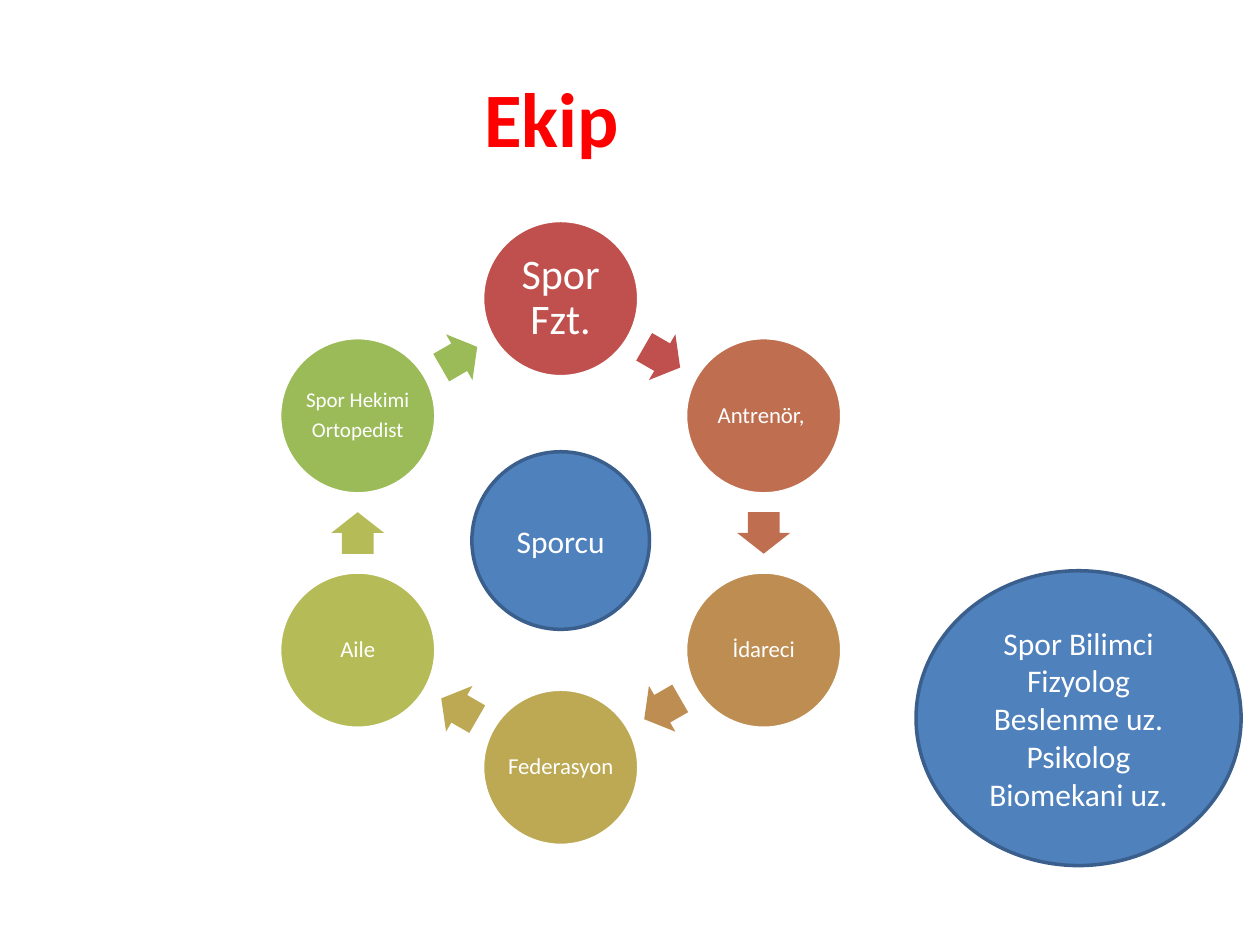
"""Builds the "Ekip" slide: a ring of team roles around the athlete."""
import math

import pptx
import pptx.dml.color
import pptx.enum.shapes
import pptx.enum.text
import pptx.util

SHAPES = pptx.enum.shapes.MSO_SHAPE
CENTER = pptx.enum.text.PP_ALIGN.CENTER
MIDDLE = pptx.enum.text.MSO_ANCHOR.MIDDLE


def color(code):
    return pptx.dml.color.RGBColor.from_string(code)


def centered(kind, x, y, width, height, fill, line=None, lines=(), size=18):
    shape = slide.shapes.add_shape(
        kind, *(round(cell * length) for length in (x - width / 2, y - height / 2, width, height)))
    shape.shadow.inherit = False
    shape.fill.solid()
    shape.fill.fore_color.rgb = color(fill)
    if line:
        shape.line.color.rgb = color(line)
        shape.line.width = pptx.util.Pt(2)
    else:
        shape.line.fill.background()
    frame = shape.text_frame
    frame.vertical_anchor = MIDDLE
    for number, text in enumerate(lines):
        paragraph = frame.add_paragraph() if number else frame.paragraphs[0]
        paragraph.text = text
        paragraph.alignment = CENTER
        paragraph.font.name = "Calibri"
        paragraph.font.size = pptx.util.Pt(size)
        paragraph.font.color.rgb = color("FFFFFF")
    return shape


prs = pptx.Presentation()
prs.slide_width, prs.slide_height = pptx.util.Inches(10), pptx.util.Inches(7.5)
cell = prs.slide_width / 100
slide = prs.slides.add_slide(prs.slide_layouts.get_by_name("Title Only"))

heading = slide.shapes.title
heading.left, heading.top, heading.width, heading.height = (
    round(cell * length) for length in (3.9, 3, 79.8, 12.5))
heading.text_frame.vertical_anchor = MIDDLE
heading_line = heading.text_frame.paragraphs[0]
heading_line.text = "Ekip"
heading_line.alignment = CENTER
heading_line.font.name = "Calibri"
heading_line.font.size = pptx.util.Pt(44)
heading_line.font.bold = True
heading_line.font.color.rgb = color("FF0000")

roles = [
    (["Spor Fzt."], 24, "C0504D"),
    (["Antrenör, "], 13, "BF6F4F"),
    (["İdareci"], 13, "BE8D52"),
    (["Federasyon"], 13, "BDA954"),
    (["Aile"], 13, "B5BC57"),
    (["Spor Hekimi", "Ortopedist"], 12, "9BBB59"),
]
ring_x, ring_y, ring_radius = 44.5, 42.3, 18.6
step = 360 / len(roles)
arrow_radius = ring_radius * math.cos(math.radians(step / 2))

for position, (lines, size, fill) in enumerate(roles):
    angle = math.radians(position * step)
    role = centered(SHAPES.OVAL, ring_x + ring_radius * math.sin(angle),
                    ring_y - ring_radius * math.cos(angle), 12.4, 12.4, fill, "FFFFFF", lines, size)
    frame = role.text_frame
    frame.margin_left = frame.margin_right = frame.margin_top = frame.margin_bottom = pptx.util.Inches(0.02)
    for paragraph in frame.paragraphs:
        paragraph.line_spacing = 0.9
        paragraph.space_after = pptx.util.Pt(round(size * 0.35, 1))

    heading_angle = (position + 0.5) * step
    angle = math.radians(heading_angle)
    arrow = centered(SHAPES.RIGHT_ARROW, ring_x + arrow_radius * math.sin(angle),
                     ring_y - arrow_radius * math.cos(angle), 3.3, 4.2, fill)
    arrow.adjustments[0] = 0.6
    arrow.adjustments[1] = 0.5
    arrow.rotation = heading_angle

experts = ["Spor Bilimci", "Fizyolog", "Beslenme uz.", "Psikolog", "Biomekani uz."]
centered(SHAPES.OVAL, 85.6, 57, 25.8, 23.4, "4F81BD", "3A5F8C", experts)
centered(SHAPES.OVAL, ring_x, 42.9, 14.1, 14.1, "4F81BD", "3A5F8C", ["Sporcu"])

prs.save("out.pptx")
